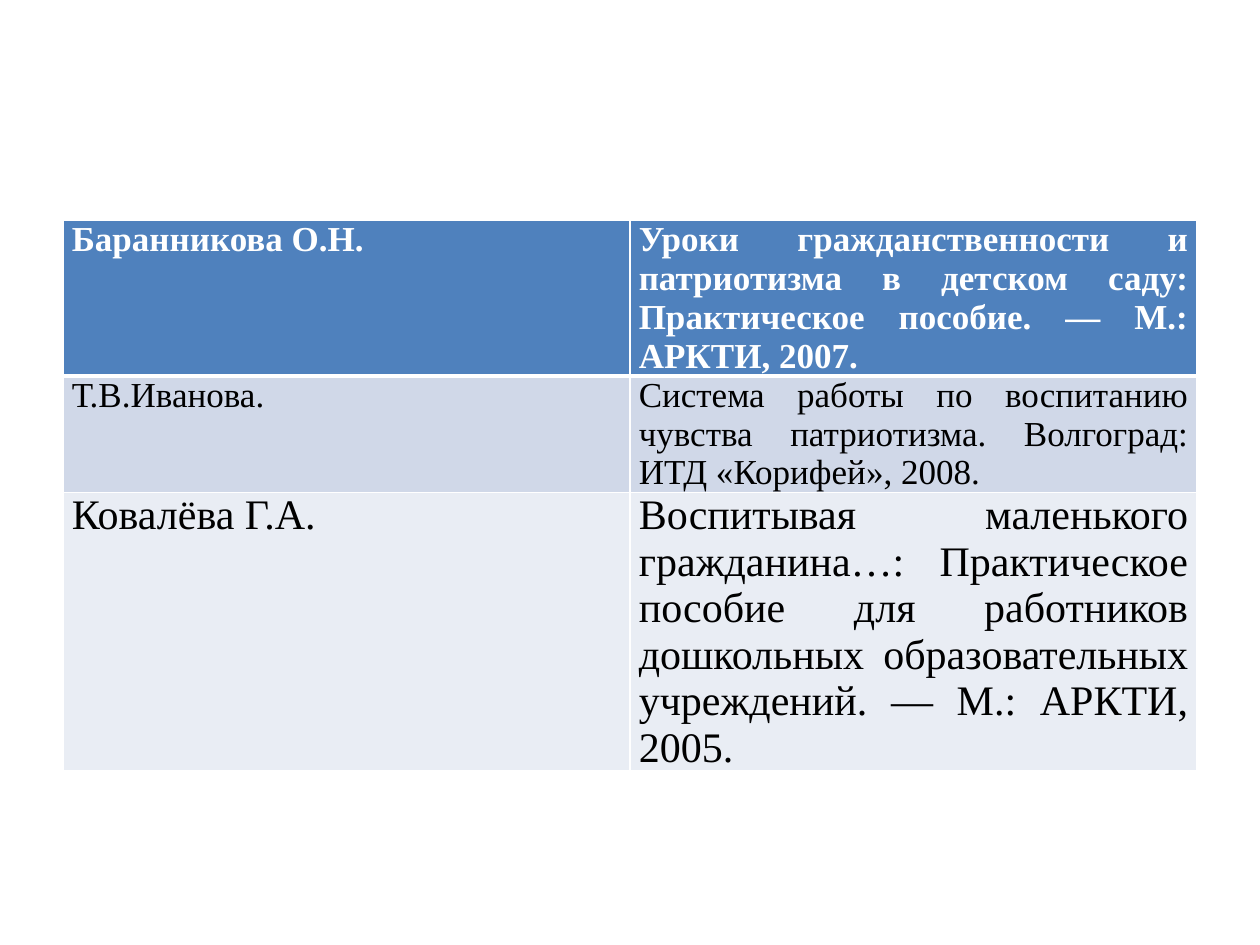
from lxml.etree import SubElement
from pptx import Presentation
from pptx.dml.color import RGBColor
from pptx.enum.text import PP_ALIGN
from pptx.oxml.ns import qn
from pptx.util import Inches, Pt

WHITE = RGBColor(0xFF, 0xFF, 0xFF)
BLACK = RGBColor(0x00, 0x00, 0x00)
HEADER_BLUE = RGBColor(0x4F, 0x81, 0xBD)
BAND_BLUE = RGBColor(0xD0, 0xD8, 0xE8)
BAND_LIGHT = RGBColor(0xE9, 0xED, 0xF4)

# Author, publication, fill, font colour, font size, bold
BOOKS = [
    ("Баранникова О.Н.",
     "Уроки гражданственности и патриотизма в детском саду: "
     "Практическое пособие. — М.: АРКТИ, 2007.",
     HEADER_BLUE, WHITE, 20, True),
    ("Т.В.Иванова.",
     "Система работы по воспитанию чувства патриотизма. "
     "Волгоград: ИТД «Корифей», 2008.",
     BAND_BLUE, BLACK, 20, False),
    ("Ковалёва Г.А.",
     "Воспитывая маленького гражданина…: Практическое пособие для работников "
     "дошкольных образовательных учреждений. — М.: АРКТИ, 2005.",
     BAND_LIGHT, BLACK, 24, False),
]


class SlideBuilder:
    font_name = "Times New Roman"
    row_height = Inches(0.41)
    side_margin = Inches(0.07)

    def __init__(self, page):
        self.page = page

    def add_book_table(self, books, left, top, width, height):
        frame = self.page.shapes.add_table(len(books), 2, left, top, width, height)
        table = frame.table
        for index, (author, publication, fill, color, size, bold) in enumerate(books):
            table.rows[index].height = self.row_height
            top_line = 3 if index == 1 else 1
            bottom_line = 3 if index == 0 else 1
            for column, text in enumerate((author, publication)):
                cell = table.cell(index, column)
                self.set_borders(cell, top_line, bottom_line)
                cell.fill.solid()
                cell.fill.fore_color.rgb = fill
                self.set_text(cell, text, color, size, bold)
        # Rows grow with their text, so the frame is taller than the row minimums
        frame.height = height

    def set_borders(self, cell, top_line, bottom_line):
        """Draw white cell borders, with top and bottom widths in points."""
        properties = cell._tc.get_or_add_tcPr()
        widths = {"a:lnL": 1, "a:lnR": 1, "a:lnT": top_line, "a:lnB": bottom_line}
        for tag, width in widths.items():
            line = SubElement(properties, qn(tag), w=str(Pt(width)))
            fill = SubElement(line, qn("a:solidFill"))
            SubElement(fill, qn("a:srgbClr"), val=str(WHITE))

    def set_text(self, cell, text, color, size, bold):
        cell.margin_left = cell.margin_right = self.side_margin
        cell.margin_top = cell.margin_bottom = 0
        cell.text_frame.text = text
        para = cell.text_frame.paragraphs[0]
        para.alignment = PP_ALIGN.JUSTIFY
        para.space_after = Pt(5)
        font = para.runs[0].font
        font.name = self.font_name
        font.size = Pt(size)
        font.bold = bold
        font.color.rgb = color


def main():
    deck = Presentation()
    deck.slide_width = Inches(10)
    deck.slide_height = Inches(7.5)
    page = deck.slides.add_slide(deck.slide_layouts[6])
    builder = SlideBuilder(page)
    builder.add_book_table(BOOKS, Inches(0.5), Inches(1.75), Inches(9), Inches(4.73))
    deck.save("out.pptx")


if __name__ == "__main__":
    main()
